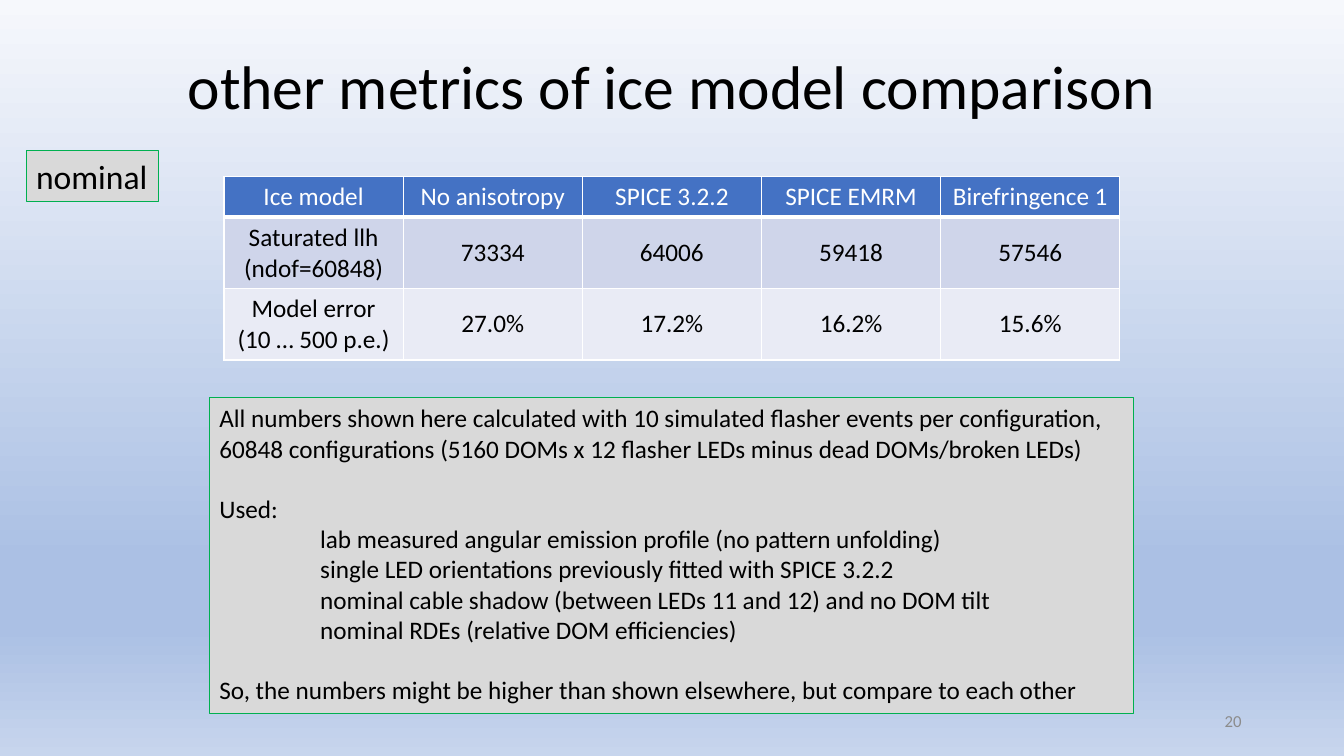
from lxml import etree
from pptx import Presentation
from pptx.dml.color import RGBColor
from pptx.enum.shapes import MSO_SHAPE
from pptx.enum.text import MSO_ANCHOR, PP_ALIGN
from pptx.oxml.ns import qn
from pptx.util import Pt

RECT = MSO_SHAPE.RECTANGLE
TOP, MIDDLE = MSO_ANCHOR.TOP, MSO_ANCHOR.MIDDLE
LEFT, CENTER, RIGHT = PP_ALIGN.LEFT, PP_ALIGN.CENTER, PP_ALIGN.RIGHT

THEME = {
    "font": "Calibri",
    "title": 44, "label": 24, "body": 18, "number": 12,
    "black": "000000", "white": "FFFFFF", "grey": "8C8C8C",
    "panel": "D9D9D9", "outline": "00B050",
    "rows": ["4472C4", "CFD5EA", "E9EBF5"],
    "background": [(0, "F6F8FC"), (74, "ABC0E4"), (83, "ABC0E4"), (100, "C7D5ED")],
}


def write(tf, lines, size, color, align, anchor):
    tf.text = "\n".join(lines)
    tf.vertical_anchor = anchor
    for p in tf.paragraphs:
        p.alignment = align
        for r in p.runs:
            r.font.name = THEME["font"]
            r.font.size = Pt(THEME[size])
            r.font.color.rgb = RGBColor.from_string(THEME[color])


def add_panel(left, top, width, height):
    sp = s.shapes.add_shape(RECT, Pt(left), Pt(top), Pt(width), Pt(height))
    sp.shadow.inherit = False
    sp.fill.solid()
    sp.fill.fore_color.rgb = RGBColor.from_string(THEME["panel"])
    sp.line.color.rgb = RGBColor.from_string(THEME["outline"])
    sp.line.width = Pt(0.75)
    return sp


prs = Presentation()
prs.slide_width, prs.slide_height = Pt(960), Pt(540)
s = prs.slides.add_slide(prs.slide_layouts[6])

fill = s.background.fill
fill.gradient()
fill.gradient_angle = 270
stops = s.element.find(".//" + qn("a:gsLst"))
for stop in list(stops):
    stops.remove(stop)
for pos, color in THEME["background"]:
    stop = etree.SubElement(stops, qn("a:gs"), pos=str(pos * 1000))
    etree.SubElement(stop, qn("a:srgbClr"), val=color)

title = s.shapes.add_textbox(Pt(66), Pt(12), Pt(828), Pt(104.4))
tf = title.text_frame
tf.word_wrap = True
write(tf, ["other metrics of ice model comparison"], "title", "black", CENTER, MIDDLE)
tf.paragraphs[0].line_spacing = 0.9

metrics = [
    ["Ice model", "No anisotropy", "SPICE 3.2.2", "SPICE EMRM", "Birefringence 1"],
    ["Saturated llh (ndof=60848)", "73334", "64006", "59418", "57546"],
    ["Model error\n(10 … 500 p.e.)", "27.0%", "17.2%", "16.2%", "15.6%"],
]
table = s.shapes.add_table(3, 5, Pt(160), Pt(126), Pt(640), Pt(131.2)).table
for row, height in zip(table.rows, [29.2, 51, 51]):
    row.height = Pt(height)
for i, values in enumerate(metrics):
    for j, value in enumerate(values):
        cell = table.cell(i, j)
        color = "black" if i else "white"
        write(cell.text_frame, value.split("\n"), "body", color, CENTER, MIDDLE)
        cell.vertical_anchor = MIDDLE
        tcPr = cell._tc.get_or_add_tcPr()
        for side in "LRTB":
            heavy = (i, side) in [(0, "B"), (1, "T")]
            ln = etree.SubElement(tcPr, qn("a:ln" + side), w=str(Pt(3 if heavy else 1)))
            paint = etree.SubElement(ln, qn("a:solidFill"))
            etree.SubElement(paint, qn("a:srgbClr"), val=THEME["white"])
        cell.fill.solid()
        cell.fill.fore_color.rgb = RGBColor.from_string(THEME["rows"][i])

notes = [
    "All numbers shown here calculated with 10 simulated flasher events per configuration, "
    "60848 configurations (5160 DOMs x 12 flasher LEDs minus dead DOMs/broken LEDs)",
    "Used:",
    "lab measured angular emission profile (no pattern unfolding)",
    "single LED orientations previously fitted with SPICE 3.2.2",
    "nominal cable shadow (between LEDs 11 and 12) and no DOM tilt",
    "nominal RDEs (relative DOM efficiencies)",
    "So, the numbers might be higher than shown elsewhere, but compare to each other",
]
tf = add_panel(149.6, 284, 660.4, 225.6).text_frame
tf.word_wrap = True
write(tf, notes, "body", "black", LEFT, TOP)
for p in tf.paragraphs[2:6]:
    p._p.get_or_add_pPr().set("marL", str(Pt(72)))
for p in (tf.paragraphs[1], tf.paragraphs[6]):
    p.space_before = Pt(21.6)

tf = add_panel(18.7, 107.6, 94.8, 36.4).text_frame
tf.word_wrap = False
write(tf, ["nominal"], "label", "black", LEFT, TOP)

number = s.shapes.add_textbox(Pt(678), Pt(500.5), Pt(216), Pt(28.75))
tf = number.text_frame
tf.word_wrap = True
write(tf, ["20"], "number", "grey", RIGHT, MIDDLE)

prs.save("out.pptx")
